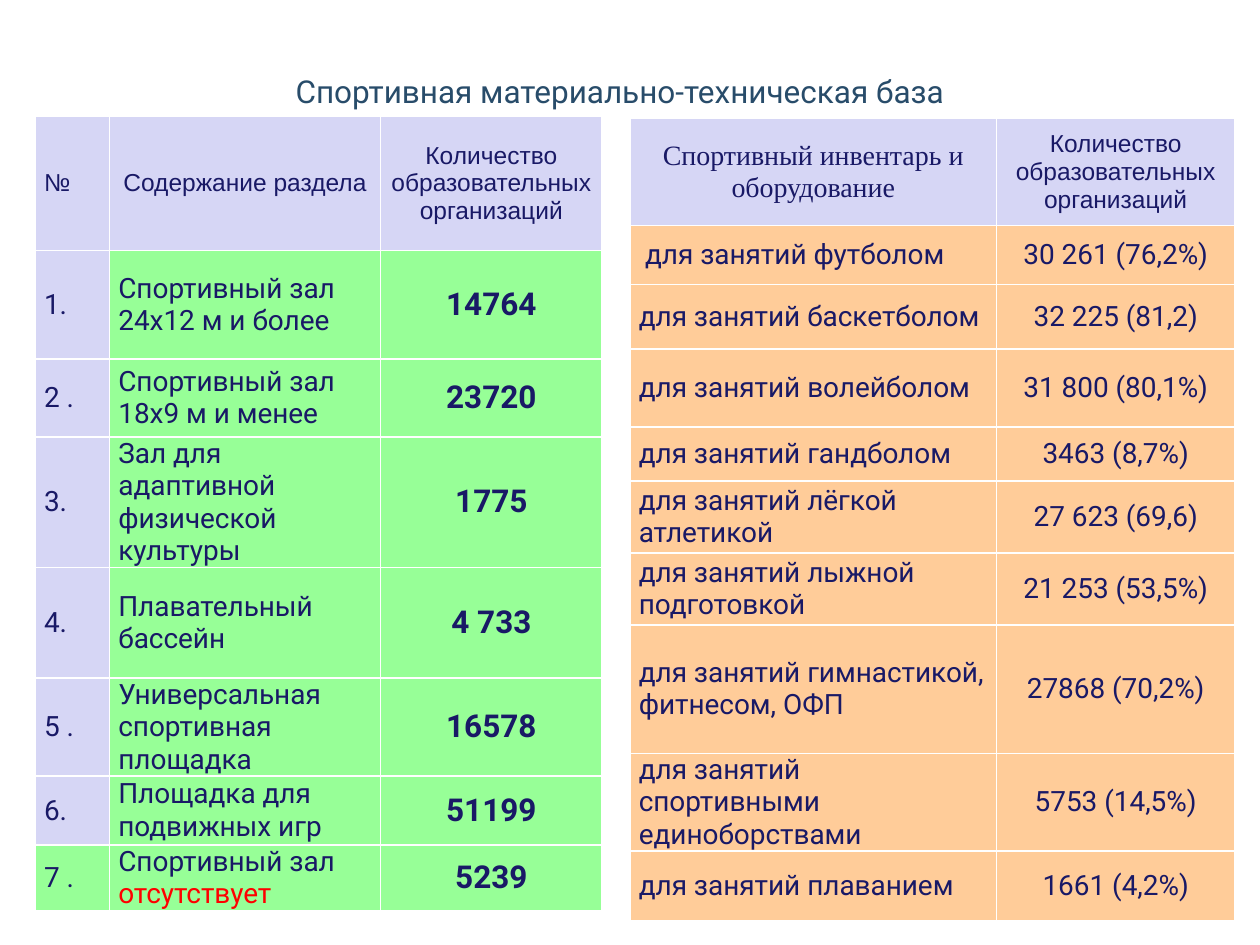
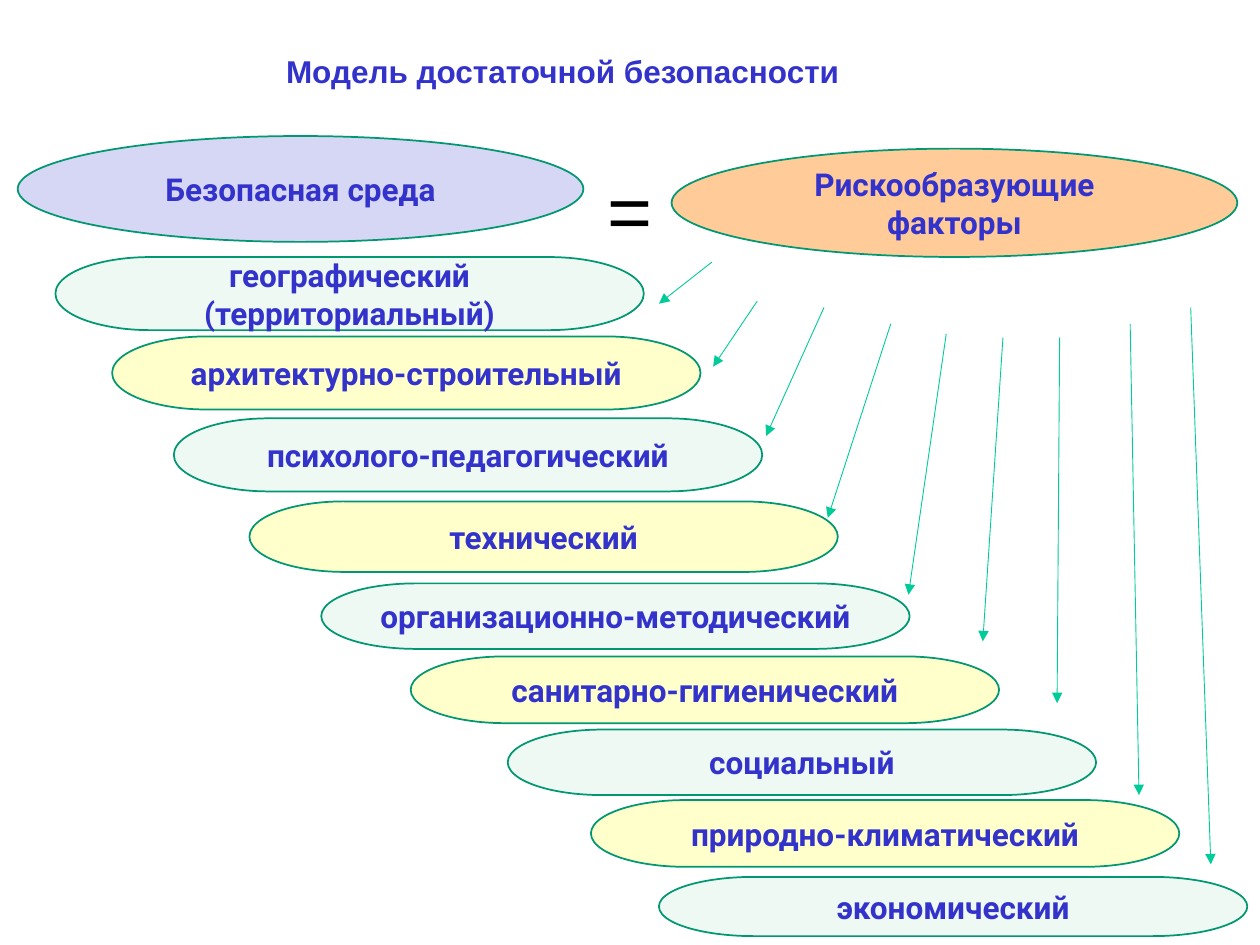
import dataclasses
import typing

import pptx
import pptx.dml.color
import pptx.enum.shapes
import pptx.enum.text
import pptx.oxml
import pptx.oxml.ns
import pptx.util

SLIDE_WIDTH, SLIDE_HEIGHT = pptx.util.Inches(10), pptx.util.Inches(7.5)
GRID_COLUMNS, GRID_ROWS = 100, 75
COLORS = {
    "title": "284C6A", "navy": "191966", "blue": "3333CC", "black": "000000",
    "red": "FF0000", "lavender": "D6D6F5", "green": "97FF97",
    "peach": "FFCC99", "mint": "EEF9F4", "cream": "FFFFCC",
    "outline": "009771", "arrow": "00CC99", "white": "FFFFFF",
}
LEFT, CENTER = pptx.enum.text.PP_ALIGN.LEFT, pptx.enum.text.PP_ALIGN.CENTER
TOP, MIDDLE = pptx.enum.text.MSO_ANCHOR.TOP, pptx.enum.text.MSO_ANCHOR.MIDDLE
SHAPES = pptx.enum.shapes.MSO_SHAPE
FACTOR_WIDTH = 46.7


class Area(typing.NamedTuple):
    """A rectangle in grid columns and rows."""
    left: float
    top: float
    width: float
    height: float


@dataclasses.dataclass(frozen=True)
class Column:
    """A table column with the format of its header and its body."""
    header: str
    width: float
    fill: str
    align: typing.Any = LEFT
    size: float = 16
    bold: bool = False
    header_align: typing.Any = CENTER
    header_font: str = "Arial"
    header_size: float = 14


@dataclasses.dataclass(frozen=True)
class Factor:
    """A risk factor with its place and the arrow that leads to it."""
    text: str
    left: float
    top: float
    height: float
    start: tuple[float, float]
    end: tuple[float, float]


COUNT_HEADER = "Количество образовательных организаций"
FACILITY_COLUMNS = [
    Column("№", 5.9, "lavender", header_align=LEFT),
    Column("Содержание раздела", 21.5, "green"),
    Column(COUNT_HEADER, 17.6, "green", CENTER, 18, True),
]
FACILITIES = [
    ("1.", "Спортивный зал 24х12 м и более", "14764"),
    ("2 .", "Спортивный зал 18х9 м и менее", "23720"),
    ("3.", "Зал для адаптивной физической культуры", "1775"),
    ("4.", "Плавательный\nбассейн", "4 733"),
    ("5 .", "Универсальная спортивная площадка", "16578"),
    ("6.", "Площадка для подвижных игр", "51199"),
    ("7 .", "Спортивный зал отсутствует", "5239"),
]
FACILITY_HEIGHTS = [10.7, 8.6, 6.2, 10, 8.8, 7.5, 5.5, 5.2]
EQUIPMENT_COLUMNS = [
    Column("Спортивный инвентарь и оборудование", 29.1, "peach",
           header_font="Times New Roman", header_size=16),
    Column(COUNT_HEADER, 18.9, "peach", CENTER),
]
EQUIPMENT = [
    ("для занятий футболом", "30 261 (76,2%)"),
    ("для занятий баскетболом", "32 225 (81,2)"),
    ("для занятий волейболом", "31 800 (80,1%)"),
    ("для занятий гандболом", "3463 (8,7%)"),
    ("для занятий лёгкой атлетикой", "27 623 (69,6)"),
    ("для занятий лыжной подготовкой", "21 253 (53,5%)"),
    ("для занятий гимнастикой, фитнесом, ОФП", "27868 (70,2%)"),
    ("для занятий спортивными единоборствами", "5753 (14,5%)"),
    ("для занятий плаванием", "1661 (4,2%)"),
]
EQUIPMENT_HEIGHTS = [8.5, 4.7, 5.1, 6.2, 4.3, 5.7, 5.7, 10.2, 7.7, 5.5]
FACTORS = [
    Factor("географический (территориальный)", 4.4, 20.4, 5.8, (56.5, 20.8), (52.3, 24.1)),
    Factor("архитектурно-строительный", 8.9, 26.7, 5.8, (60.1, 23.9), (56.6, 29.1)),
    Factor("психолого-педагогический", 13.8, 33.2, 5.8, (65.4, 24.4), (60.8, 34.6)),
    Factor("технический", 19.8, 39.8, 5.6, (70.7, 25.7), (65.7, 41.1)),
    Factor("организационно-методический", 25.5, 46.3, 5.2, (75.1, 26.5), (72.1, 47.2)),
    Factor("санитарно-гигиенический", 32.6, 52.1, 5.3, (79.6, 26.8), (78, 50.9)),
    Factor("социальный", 40.3, 57.9, 5.2, (84.1, 26.8), (83.9, 55.8)),
    Factor("природно-климатический", 46.9, 63.5, 5.3, (89.7, 25.7), (90.4, 63.1)),
    Factor("экономический", 52.3, 69.6, 4.7, (94.5, 24.4), (96.1, 68.6)),
]


def across(columns: float) -> int:
    """Turn grid columns into a length."""
    return round(SLIDE_WIDTH * columns / GRID_COLUMNS)


def down(rows: float) -> int:
    """Turn grid rows into a length."""
    return round(SLIDE_HEIGHT * rows / GRID_ROWS)


def place(area: Area) -> tuple[int, int, int, int]:
    """Turn a grid area into left, top, width and height."""
    return across(area.left), down(area.top), across(area.width), down(area.height)


def rgb(name: str) -> pptx.dml.color.RGBColor:
    """Look up a colour by name."""
    return pptx.dml.color.RGBColor.from_string(COLORS[name])


def write(frame, text: str, *, size: float, color: str, font: str = "Roboto",
          bold: bool = False, align=LEFT, accent: str = "") -> None:
    """Fill a text frame, one paragraph a line, with an accent word in red."""
    for index, line in enumerate(text.split("\n")):
        para = frame.add_paragraph() if index else frame.paragraphs[0]
        para.alignment = align
        parts = line.partition(accent) if accent else (line,)
        for part in filter(None, parts):
            span = para.add_run()
            span.text = part
            span.font.name, span.font.size = font, pptx.util.Pt(size)
            span.font.bold = bold
            span.font.color.rgb = rgb("red" if part == accent else color)


def add_page(deck, title: str, area: Area, anchor, **text_format):
    """Add a title-only page with a placed and formatted title."""
    page = deck.slides.add_slide(deck.slide_layouts[5])
    page.background.fill.solid()
    page.background.fill.fore_color.rgb = rgb("white")
    box = page.shapes.title
    box.left, box.top, box.width, box.height = place(area)
    frame = box.text_frame
    frame.word_wrap, frame.vertical_anchor = True, anchor
    frame.auto_size = pptx.enum.text.MSO_AUTO_SIZE.NONE
    write(frame, title, size=18, **text_format)
    return page


def style_cell(cell, fill: str) -> None:
    """Give a cell its margins, white borders and fill."""
    cell.margin_left = cell.margin_right = pptx.util.Inches(0.07)
    cell.margin_top = cell.margin_bottom = 0
    cell.vertical_anchor = MIDDLE
    properties = cell._tc.get_or_add_tcPr()
    for side in ("lnL", "lnR", "lnT", "lnB"):
        properties.append(pptx.oxml.parse_xml(
            f'<a:{side} {pptx.oxml.ns.nsdecls("a")} w="12700"><a:solidFill>'
            f'<a:srgbClr val="{COLORS["white"]}"/></a:solidFill></a:{side}>'))
    cell.fill.solid()
    cell.fill.fore_color.rgb = rgb(fill)


def draw_table(page, left: float, top: float, columns: list[Column],
               heights: list[float], records: list[tuple], accent: str = ""):
    """Draw a table with a lavender header row."""
    area = Area(left, top, sum(column.width for column in columns), sum(heights))
    table = page.shapes.add_table(len(heights), len(columns), *place(area)).table
    table.first_row = table.horz_banding = False
    for row, height in zip(table.rows, heights):
        row.height = down(height)
    for x, column in enumerate(columns):
        table.columns[x].width = across(column.width)
        header = table.cell(0, x)
        style_cell(header, "lavender")
        write(header.text_frame, column.header, size=column.header_size, color="navy",
              font=column.header_font, align=column.header_align)
        for y, record in enumerate(records, 1):
            cell = table.cell(y, x)
            style_cell(cell, column.fill)
            write(cell.text_frame, record[x], size=column.size, color="navy",
                  bold=column.bold, align=column.align, accent=accent)
    return table


def draw_label(page, kind, area: Area, text: str, fill: str) -> None:
    """Draw an outlined shape with a bold centred label."""
    shape = page.shapes.add_shape(kind, *place(area))
    shape.shadow.inherit = False
    shape.fill.solid()
    shape.fill.fore_color.rgb = rgb(fill)
    shape.line.color.rgb, shape.line.width = rgb("outline"), pptx.util.Pt(1)
    frame = shape.text_frame
    frame.word_wrap, frame.vertical_anchor = True, MIDDLE
    write(frame, text, size=18, color="blue", bold=True, align=CENTER)


def draw_arrow(page, start: tuple[float, float], end: tuple[float, float]) -> None:
    """Draw a thin arrow between two grid points."""
    arrow = page.shapes.add_connector(
        pptx.enum.shapes.MSO_CONNECTOR.STRAIGHT,
        across(start[0]), down(start[1]), across(end[0]), down(end[1]))
    arrow.line.color.rgb, arrow.line.width = rgb("arrow"), pptx.util.Pt(0.5)
    namespace = pptx.oxml.ns.nsdecls("a")
    arrow.line._get_or_add_ln().append(
        pptx.oxml.parse_xml(f'<a:tailEnd {namespace} type="triangle"/>'))
    arrow._element.spPr.append(pptx.oxml.parse_xml(f"<a:effectLst {namespace}/>"))


def build_facilities(deck) -> None:
    """Build the page on sports halls and equipment."""
    page = add_page(deck, "Спортивная материально-техническая база",
                    Area(5.9, 4, 86.6, 6.4), MIDDLE, color="title", align=CENTER)
    facilities = draw_table(page, 2.8, 9.2, FACILITY_COLUMNS, FACILITY_HEIGHTS,
                            FACILITIES, accent="отсутствует")
    facilities.cell(len(FACILITIES), 0).fill.fore_color.rgb = rgb("green")
    equipment = draw_table(page, 50, 9.4, EQUIPMENT_COLUMNS, EQUIPMENT_HEIGHTS, EQUIPMENT)
    equipment.cell(1, 0).margin_left = pptx.util.Inches(0.12)


def build_safety_model(deck) -> None:
    """Build the page on the safety model and its risk factors."""
    page = add_page(deck, "Модель достаточной безопасности",
                    Area(21.7, 3.6, 54.3, 4), TOP, color="blue", font="Arial", bold=True)
    draw_label(page, SHAPES.OVAL, Area(1.4, 10.8, 44.9, 8.4), "Безопасная среда", "lavender")
    draw_label(page, SHAPES.OVAL, Area(53.3, 11.8, 44.9, 8.6),
               "Рискообразующие факторы", "peach")
    equals = page.shapes.add_textbox(*place(Area(47.2, 12.4, 6.5, 8.4))).text_frame
    equals.word_wrap = True
    write(equals, "=", size=44, color="black", font="Arial")
    for index, factor in enumerate(FACTORS):
        area = Area(factor.left, factor.top, FACTOR_WIDTH, factor.height)
        draw_label(page, SHAPES.FLOWCHART_TERMINATOR, area, factor.text,
                   "cream" if index % 2 else "mint")
    for factor in FACTORS:
        draw_arrow(page, factor.start, factor.end)


def main() -> None:
    """Build and save the deck."""
    deck = pptx.Presentation()
    deck.slide_width, deck.slide_height = SLIDE_WIDTH, SLIDE_HEIGHT
    build_facilities(deck)
    build_safety_model(deck)
    deck.save("out.pptx")


if __name__ == "__main__":
    main()
